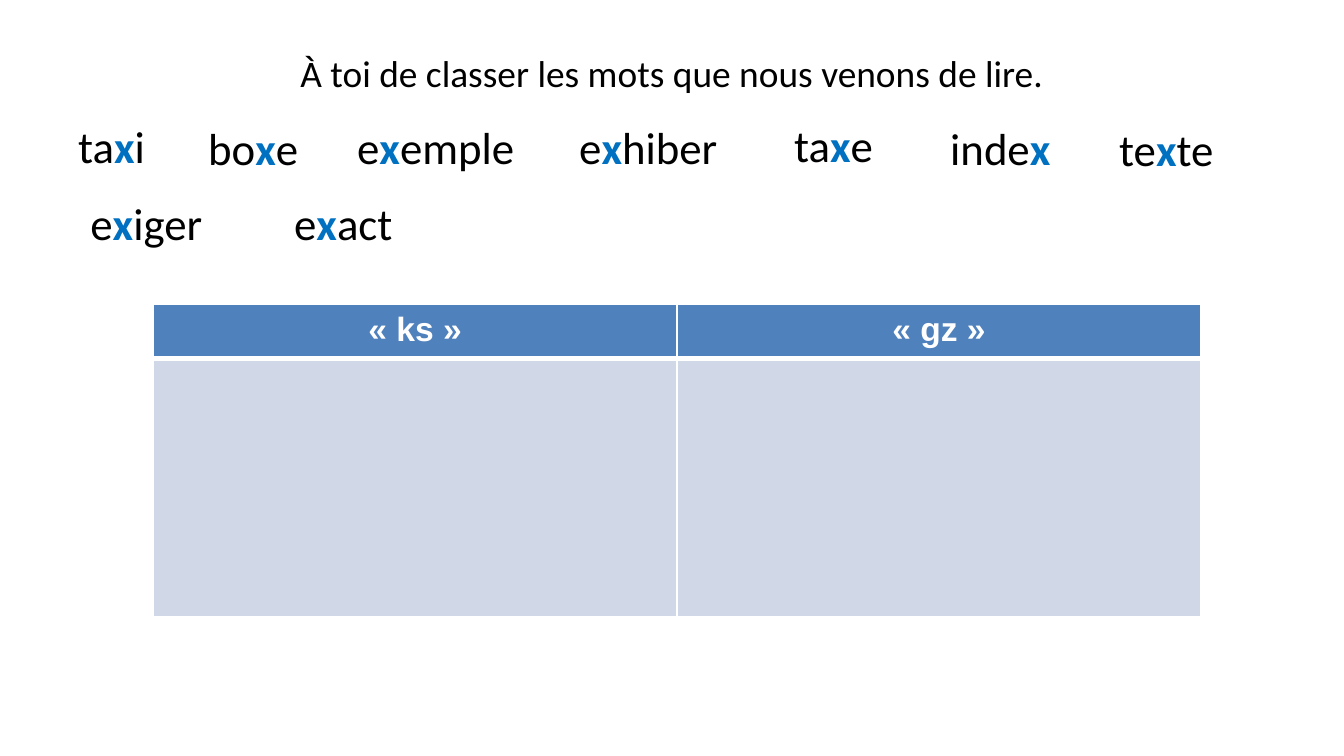
"""Build a French word-sorting slide for the two sounds of the letter x."""
from lxml import etree
from pptx import Presentation
from pptx.dml.color import RGBColor
from pptx.enum.text import MSO_ANCHOR, MSO_AUTO_SIZE, PP_ALIGN
from pptx.oxml.ns import qn
from pptx.util import Pt

CENTER = PP_ALIGN.CENTER
TOP = MSO_ANCHOR.TOP
MIDDLE = MSO_ANCHOR.MIDDLE
NO_FIT = MSO_AUTO_SIZE.NONE

BLACK = RGBColor(0x00, 0x00, 0x00)
WHITE = RGBColor(0xFF, 0xFF, 0xFF)
LETTER_BLUE = RGBColor(0x00, 0x70, 0xC0)
HEADER_BLUE = RGBColor(0x4F, 0x81, 0xBD)
CELL_BLUE = RGBColor(0xD0, 0xD8, 0xE8)

TITLE = "À toi de classer les mots que nous venons de lire."
TITLE_AREA = (67, 31, 1210, 83)
BODY_WORD = ("exiger", (77, 189, 191, 75))
WORDS = [
    ("texte", (1106, 115, 159, 78)),
    ("exhiber", (566, 113, 208, 83)),
    ("index", (937, 114, 208, 95)),
    ("exemple", (344, 113, 232, 107)),
    ("taxi", (65, 112, 122, 73)),
    ("exact", (281, 189, 191, 74)),
    ("boxe", (195, 114, 148, 73)),
    ("taxe", (781, 111, 169, 99)),
]
SOUNDS = ["« ks »", "« gz »"]
TABLE_AREA = (153, 304, 1048, 313)
HEADER_HEIGHT = 55

SCALE = 914400 / 134.4


def px(length):
    return round(length * SCALE)


def place(box, area):
    box.left, box.top, box.width, box.height = map(px, area)


def style(span, size, color, bold=False, name="Calibri"):
    font = span.font
    font.name, font.size, font.bold = name, Pt(size), bold
    font.color.rgb = color


def write_word(box, word):
    frame = box.text_frame
    frame.word_wrap = True
    frame.auto_size = NO_FIT
    frame.vertical_anchor = TOP
    para = frame.paragraphs[0]
    para.space_before = Pt(4.8)
    for part in word.partition("x"):
        if part:
            span = para.add_run()
            span.text = part
            is_x = part == "x"
            style(span, 24, LETTER_BLUE if is_x else BLACK, is_x)
    return para


def set_borders(cell, bottom_width):
    properties = cell._tc.get_or_add_tcPr()
    widths = {"a:lnL": 1, "a:lnR": 1, "a:lnT": 1, "a:lnB": bottom_width}
    for position, (tag, width) in enumerate(widths.items()):
        line = etree.Element(qn(tag), w=str(Pt(width)))
        fill = etree.SubElement(line, qn("a:solidFill"))
        etree.SubElement(fill, qn("a:srgbClr"), val=str(WHITE))
        properties.insert(position, line)


def add_sound_table(page):
    table = page.shapes.add_table(2, len(SOUNDS), *map(px, TABLE_AREA)).table
    table.rows[0].height = px(HEADER_HEIGHT)
    table.rows[1].height = px(TABLE_AREA[3] - HEADER_HEIGHT)
    for column, sound in enumerate(SOUNDS):
        header, answer = table.cell(0, column), table.cell(1, column)
        for cell, color, bottom in ((header, HEADER_BLUE, 3), (answer, CELL_BLUE, 1)):
            cell.fill.solid()
            cell.fill.fore_color.rgb = color
            set_borders(cell, bottom)
        header.text = sound
        para = header.text_frame.paragraphs[0]
        para.alignment = CENTER
        style(para.runs[0], 18, WHITE, True, "Arial")


def main():
    deck = Presentation()
    deck.slide_width, deck.slide_height = px(1344), px(756)
    page = deck.slides.add_slide(deck.slide_layouts[1])

    title, body = page.placeholders
    place(title, TITLE_AREA)
    title.text_frame.text = TITLE
    title.text_frame.auto_size = NO_FIT
    title.text_frame.vertical_anchor = MIDDLE
    para = title.text_frame.paragraphs[0]
    para.alignment = CENTER
    style(para.runs[0], 20, BLACK)

    add_sound_table(page)
    for word, area in WORDS:
        write_word(page.shapes.add_textbox(*map(px, area)), word)

    word, area = BODY_WORD
    place(body, area)
    properties = write_word(body, word)._p.get_or_add_pPr()
    properties.set("marL", "0")
    properties.set("indent", "0")
    etree.SubElement(properties, qn("a:buNone"))

    deck.save("out.pptx")


if __name__ == "__main__":
    main()
